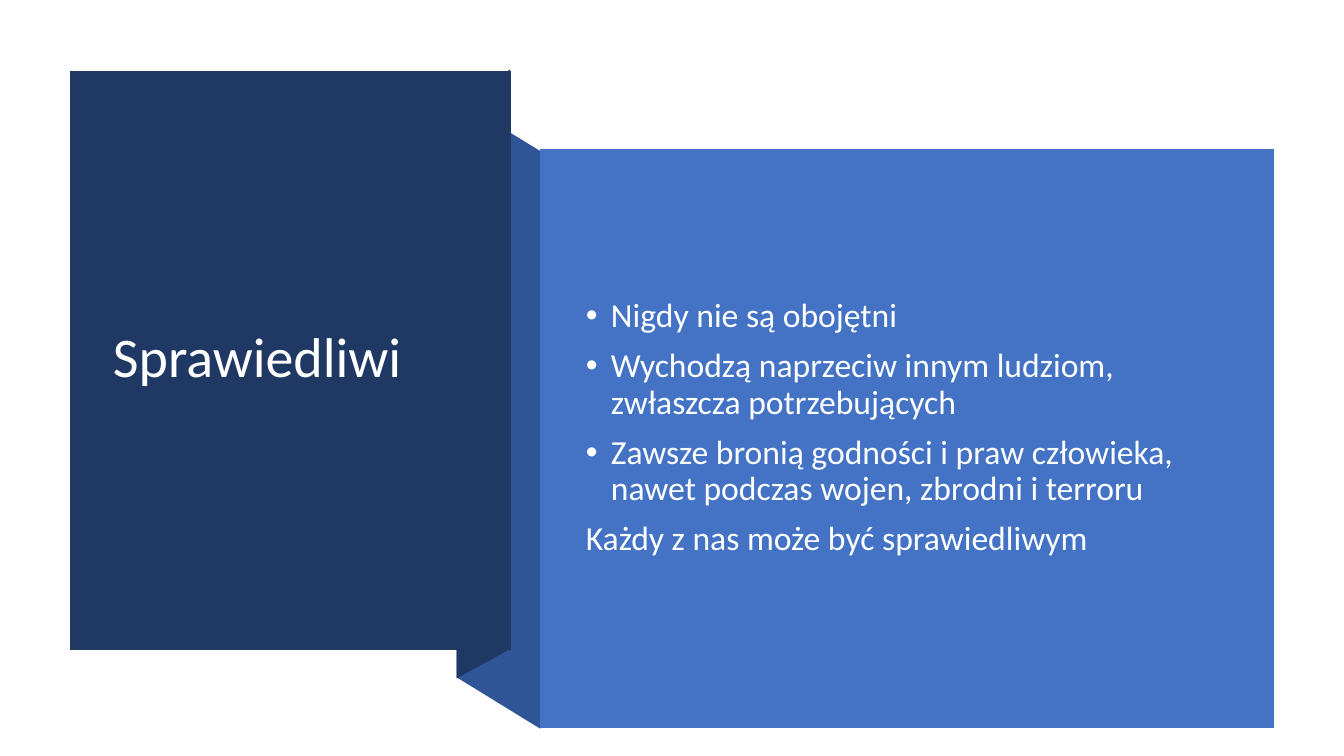
"""Build the "Sprawiedliwi" slide with a folded ribbon and a list panel."""
from typing import NamedTuple

from pptx import Presentation
from pptx.dml.color import RGBColor
from pptx.enum.text import MSO_ANCHOR, MSO_AUTO_SIZE, PP_ALIGN
from pptx.oxml.ns import qn
from pptx.util import Pt

LEFT = PP_ALIGN.LEFT
MIDDLE = MSO_ANCHOR.MIDDLE
NO_FIT = MSO_AUTO_SIZE.NONE
PX = 9144
FONT = "Calibri"
COLORS = {
    "navy": "203864",
    "fold": "2F5597",
    "panel": "4472C4",
    "title": "FFFFFF",
    "list": "FEFFFF",
}


class Face(NamedTuple):
    color: str
    points: list[tuple[int, int]]


class Box(NamedTuple):
    left: int
    top: int
    width: int
    height: int


class Line(NamedTuple):
    text: str
    bullet: bool = True


FACES = [
    Face("fold", [(536, 723), (453, 672), (453, 99), (536, 150)]),
    Face("navy", [(506, 644), (453, 673), (453, 98), (506, 69)]),
    Face("navy", [(69, 70), (507, 70), (507, 645), (69, 645)]),
    Face("panel", [(536, 148), (1264, 148), (1264, 722), (536, 722)]),
]
TITLE = Box(102, 107, 371, 499)
BODY = Box(571, 188, 651, 474)
LINES = [
    Line("Nigdy nie są obojętni"),
    Line("Wychodzą naprzeciw innym ludziom, zwłaszcza potrzebujących"),
    Line("Zawsze bronią godności i praw człowieka, nawet podczas wojen, "
         "zbrodni i terroru"),
    Line("Każdy z nas może być sprawiedliwym", False),
]


def draw_face(shapes, face: Face) -> None:
    """Draw one flat polygon."""
    pen = shapes.build_freeform(*face.points[0], scale=PX)
    pen.add_line_segments(face.points[1:], close=True)
    shape = pen.convert_to_shape()
    shape.shadow.inherit = False
    shape.fill.solid()
    shape.fill.fore_color.rgb = RGBColor.from_string(COLORS[face.color])
    shape.line.fill.background()


def place(holder, box: Box):
    """Move a placeholder to the front and return its text frame."""
    holder.left, holder.top, holder.width, holder.height = (
        side * PX for side in box)
    holder.element.getparent().append(holder.element)
    frame = holder.text_frame
    frame.word_wrap = True
    frame.auto_size = NO_FIT
    frame.vertical_anchor = MIDDLE
    return frame


def style(para, size: int, color: str, before: int) -> None:
    """Set the font and spacing of a paragraph."""
    para.alignment = LEFT
    para.line_spacing = 0.9
    para.space_before = Pt(before)
    para.font.name = FONT
    para.font.size = Pt(size)
    para.font.color.rgb = RGBColor.from_string(COLORS[color])


def indent(para, bullet: bool) -> None:
    """Give a paragraph a hanging bullet or none."""
    props = para._p.get_or_add_pPr()
    hang = 25 * PX if bullet else 0
    props.set("marL", str(hang))
    props.set("indent", str(-hang))
    if bullet:
        font = props.makeelement(qn("a:buFont"), {"typeface": "Arial"})
        mark = props.makeelement(qn("a:buChar"), {"char": "•"})
        nodes = [font, mark]
    else:
        nodes = [props.makeelement(qn("a:buNone"), {})]
    spot = props.find(qn("a:defRPr"))
    for node in nodes:
        spot.addprevious(node)


def main() -> None:
    """Build and save the slide."""
    deck = Presentation()
    deck.slide_width, deck.slide_height = 1333 * PX, 750 * PX
    slide = deck.slides.add_slide(deck.slide_layouts[1])
    for face in FACES:
        draw_face(slide.shapes, face)

    head = place(slide.shapes.title, TITLE)
    head.text = "Sprawiedliwi"
    style(head.paragraphs[0], 40, "title", 0)

    body = place(slide.placeholders[1], BODY)
    body.text = "\n".join(line.text for line in LINES)
    for para, line in zip(body.paragraphs, LINES):
        style(para, 24, "list", 10)
        indent(para, line.bullet)

    deck.save("out.pptx")


if __name__ == "__main__":
    main()
